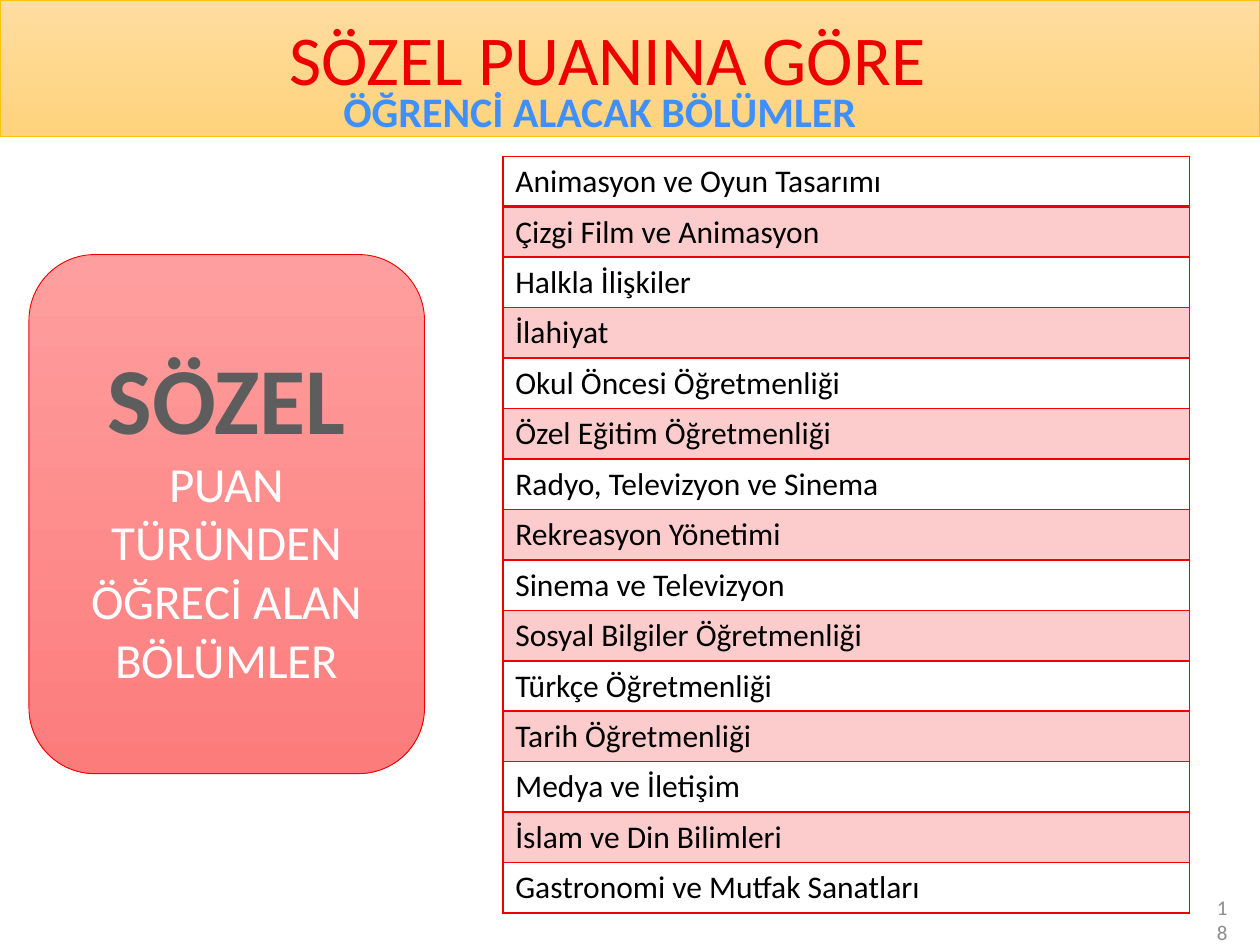
from lxml import etree
from pptx import Presentation
from pptx.dml.color import RGBColor
from pptx.enum.shapes import MSO_SHAPE
from pptx.enum.text import MSO_ANCHOR, PP_ALIGN
from pptx.oxml.ns import qn
from pptx.util import Inches, Pt

RECTANGLE, ROUNDED = MSO_SHAPE.RECTANGLE, MSO_SHAPE.ROUNDED_RECTANGLE
TOP, MIDDLE = MSO_ANCHOR.TOP, MSO_ANCHOR.MIDDLE
LEFT, CENTER, RIGHT = PP_ALIGN.LEFT, PP_ALIGN.CENTER, PP_ALIGN.RIGHT
RED = "EF0000"
DEPARTMENTS = [
    "Animasyon ve Oyun Tasarımı",
    "Çizgi Film ve Animasyon",
    "Halkla İlişkiler",
    "İlahiyat",
    "Okul Öncesi Öğretmenliği",
    "Özel Eğitim Öğretmenliği",
    "Radyo, Televizyon ve Sinema",
    "Rekreasyon Yönetimi",
    "Sinema ve Televizyon",
    "Sosyal Bilgiler Öğretmenliği",
    "Türkçe Öğretmenliği",
    "Tarih Öğretmenliği",
    "Medya ve İletişim",
    "İslam ve Din Bilimleri",
    "Gastronomi ve Mutfak Sanatları",
]


def color(value):
    return RGBColor.from_string(value)


def write(paragraph, text, size, value, alignment, bold=False):
    paragraph.alignment = alignment
    run = paragraph.add_run()
    run.text = text
    run.font.name = "Calibri"
    run.font.size = Pt(size)
    run.font.bold = bold
    run.font.color.rgb = color(value)


presentation = Presentation()
presentation.slide_width = Inches(10)
presentation.slide_height = Inches(7.5)
slide = presentation.slides.add_slide(presentation.slide_layouts[5])

panels = []
for kind, box, stops, line in [
    (ROUNDED, (0.23, 2.02, 3.14, 4.12), ("FF9E9E", "FC7C7C"), RED),
    (RECTANGLE, (0, 0, 10, 1.08), ("FFDD9F", "FFD37D"), "FFC30B"),
]:
    shape = slide.shapes.add_shape(kind, *[Inches(length) for length in box])
    shape.shadow.inherit = False
    shape.fill.gradient()
    shape.fill.gradient_angle = 270
    for stop, value, position in zip(shape.fill.gradient_stops, stops, (0, 1)):
        stop.color.rgb = color(value)
        stop.position = position
    shape.line.color.rgb = color(line)
    shape.line.width = Pt(0.5)
    panels.append(shape)
score_panel, header_band = panels

score_frame = score_panel.text_frame
score_frame.vertical_anchor = MIDDLE
write(score_frame.paragraphs[0], "SÖZEL", 54, "5D5D5D", CENTER, True)
write(score_frame.add_paragraph(), "PUAN TÜRÜNDEN ÖĞRECİ ALAN BÖLÜMLER", 28, "FFFFFF", CENTER)

title = slide.shapes.title
title.left, title.top = Inches(-0.18), Inches(0.07)
title.width, title.height = Inches(10), Inches(1.18)
title.text_frame.vertical_anchor = TOP
write(title.text_frame.paragraphs[0], "SÖZEL PUANINA GÖRE", 40, RED, CENTER)
header_band.element.addnext(title.element)

for text, box, size, value, alignment, bold, anchor in [
    ("ÖĞRENCİ ALACAK BÖLÜMLER", (0.27, 0.63, 8.98, 0.5), 24, "3F90FF", CENTER, True, TOP),
    ("18", (9.49, 7.1, 0.35, 0.4), 12, "8C8C8C", RIGHT, False, MIDDLE),
]:
    text_box = slide.shapes.add_textbox(*[Inches(length) for length in box])
    text_box.text_frame.word_wrap = True
    text_box.text_frame.vertical_anchor = anchor
    write(text_box.text_frame.paragraphs[0], text, size, value, alignment, bold)

table = slide.shapes.add_table(
    len(DEPARTMENTS), 1, Inches(3.99), Inches(1.24), Inches(5.45), Inches(6)
).table
for index, department in enumerate(DEPARTMENTS):
    cell = table.cell(index, 0)
    write(cell.text_frame.paragraphs[0], department, 18, "000000", LEFT)
    properties = cell._tc.get_or_add_tcPr()
    for side in ("lnL", "lnR", "lnT", "lnB"):
        thick = (index, side) in [(0, "lnB"), (1, "lnT")]
        border = etree.SubElement(properties, qn("a:" + side), w=str(Pt(2 if thick else 1)))
        fill = etree.SubElement(border, qn("a:solidFill"))
        etree.SubElement(fill, qn("a:srgbClr"), val=RED)
    cell.fill.solid()
    cell.fill.fore_color.rgb = color("FCCCCC" if index % 2 else "FFFFFF")

presentation.save("out.pptx")
